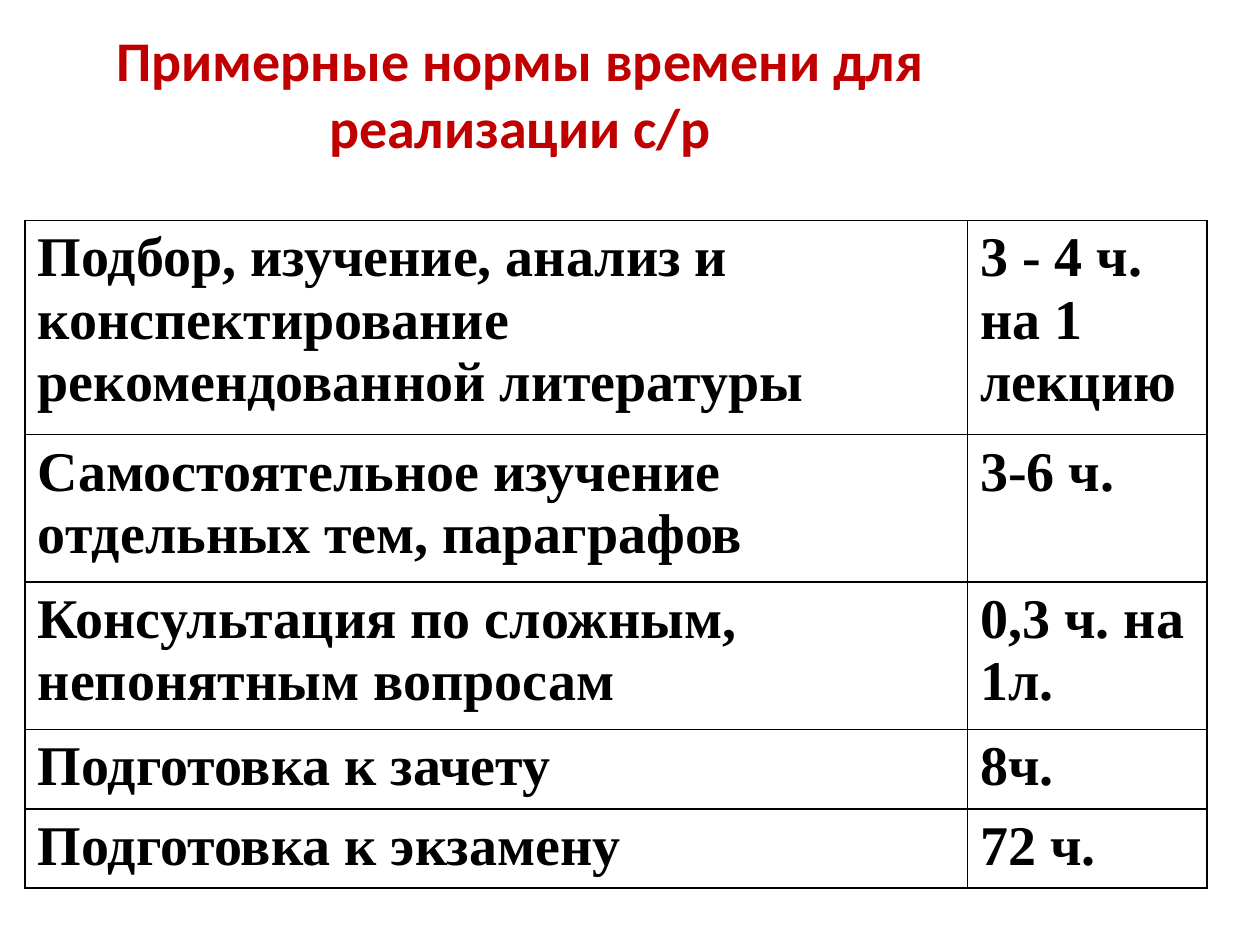
from dataclasses import dataclass
from typing import NamedTuple

from lxml import etree
from pptx import Presentation
from pptx import util as u
from pptx.dml.color import RGBColor
from pptx.enum import text
from pptx.oxml.ns import qn


@dataclass(frozen=True)
class Theme:
    title_font: str = "Calibri"
    body_font: str = "Times New Roman"
    size: int = 32
    title: str = "C00000"
    ink: str = "000000"
    border: str = "000000"
    border_pt: float = 1


class Norm(NamedTuple):
    work: str
    hours: str
    height: float


THEME = Theme()
COLUMN_WIDTHS = (7.48, 1.9)
NORMS = (
    Norm("Подбор, изучение, анализ и конспектирование рекомендованной литературы",
         "3 - 4 ч. на 1 лекцию", 1.7),
    Norm("Самостоятельное изучение отдельных тем, параграфов", "3-6 ч.", 1.17),
    Norm("Консультация по сложным, непонятным вопросам", "0,3 ч. на 1л.", 1.17),
    Norm("Подготовка к зачету", "8ч.", 0.63),
    Norm("Подготовка к экзамену", "72 ч.", 0.63),
)


def write(tf, content: str, *, font: str, color: str, size: float = THEME.size,
          bold: bool = True, align=text.PP_ALIGN.LEFT) -> None:
    p = tf.paragraphs[0]
    p.alignment = align
    r = p.add_run()
    r.text = content
    r.font.name, r.font.size, r.font.bold = font, u.Pt(size), bold
    r.font.color.rgb = RGBColor.from_string(color)


def add_borders(cell, color: str, width: float) -> None:
    """Outline all four sides; border lines must precede the fill in tcPr."""
    tc_pr = cell._tc.get_or_add_tcPr()
    for i, side in enumerate(("lnL", "lnR", "lnT", "lnB")):
        ln = etree.Element(qn(f"a:{side}"), w=str(u.Pt(width)))
        fill = etree.SubElement(ln, qn("a:solidFill"))
        etree.SubElement(fill, qn("a:srgbClr"), val=color)
        tc_pr.insert(i, ln)


def add_title(s, content: str) -> None:
    sp = s.shapes.title
    sp.left, sp.top = u.Inches(0.5), u.Inches(0)
    sp.width, sp.height = u.Inches(7.26), u.Inches(1.47)
    tf = sp.text_frame
    tf.word_wrap = True
    tf.auto_size = text.MSO_AUTO_SIZE.NONE
    tf.vertical_anchor = text.MSO_ANCHOR.MIDDLE
    write(tf, content, font=THEME.title_font, color=THEME.title,
          align=text.PP_ALIGN.CENTER)


def add_norms_table(s, norms: tuple[Norm, ...]) -> None:
    table = s.shapes.add_table(
        len(norms), len(COLUMN_WIDTHS), u.Inches(0.2), u.Inches(1.75),
        u.Inches(sum(COLUMN_WIDTHS)), u.Inches(sum(n.height for n in norms))).table
    table.first_row = table.horz_banding = False
    for column, width in zip(table.columns, COLUMN_WIDTHS):
        column.width = u.Inches(width)
    for row, norm in zip(table.rows, norms):
        row.height = u.Inches(norm.height)
        for cell, content in zip(row.cells, (norm.work, norm.hours)):
            cell.fill.background()
            add_borders(cell, THEME.border, THEME.border_pt)
            write(cell.text_frame, content, font=THEME.body_font, color=THEME.ink)


def main() -> None:
    prs = Presentation()
    prs.slide_width, prs.slide_height = u.Inches(10), u.Inches(7.5)
    s = prs.slides.add_slide(prs.slide_layouts.get_by_name("Title Only"))
    add_title(s, "Примерные нормы времени для реализации с/р")
    add_norms_table(s, NORMS)
    prs.save("out.pptx")


if __name__ == "__main__":
    main()
